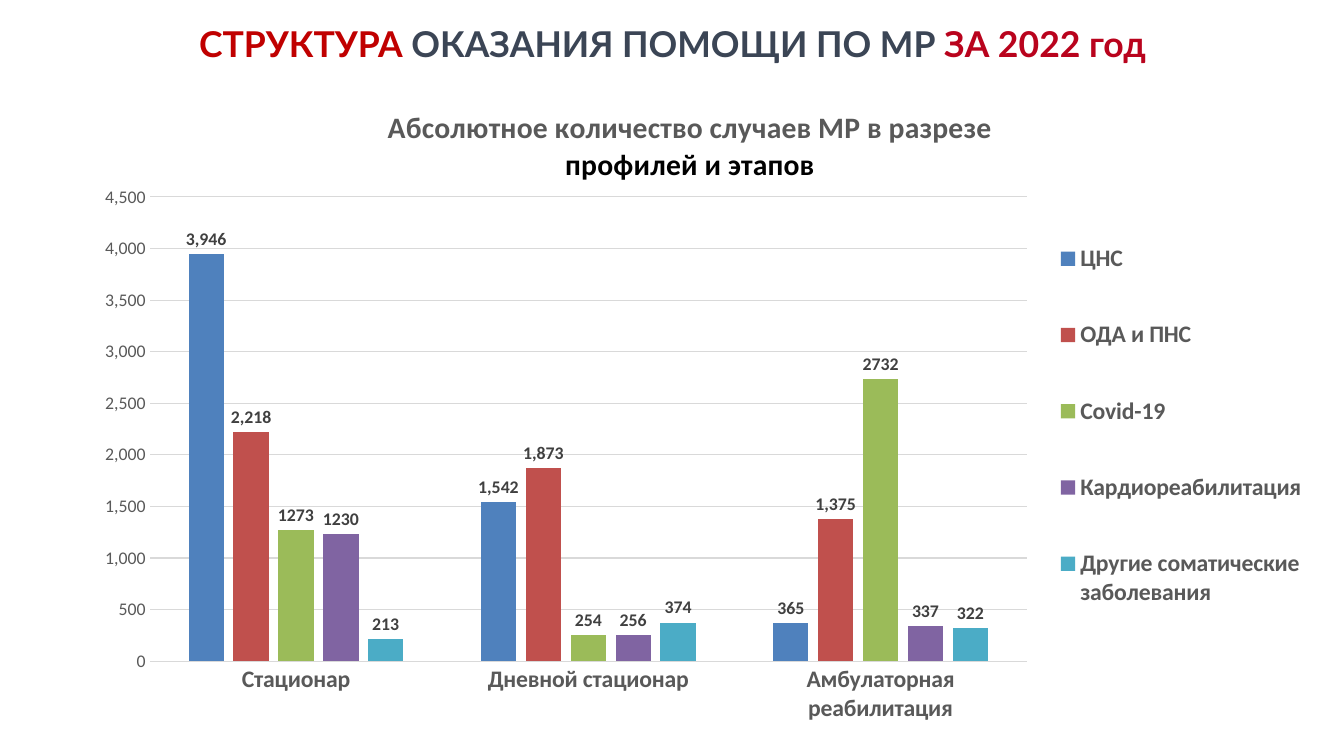
from dataclasses import dataclass

from lxml import etree
from pptx import Presentation
from pptx.chart.data import CategoryChartData
from pptx.dml.color import RGBColor
from pptx.enum import chart as ch, text
from pptx.oxml.ns import qn
from pptx.util import Inches, Pt


@dataclass(frozen=True)
class Theme:
    heading_font: str = "Lato"
    chart_font: str = "Calibri"
    red: str = "C00000"
    crimson: str = "B9031D"
    slate: str = "3B4555"
    black: str = "000000"
    grey: str = "595959"
    label: str = "404040"
    rule: str = "D9D9D9"
    heading_size: int = 24
    chart_title_size: int = 20
    caption_size: int = 16
    value_size: int = 12


T = Theme()

HEADING = [
    ("СТРУКТУРА", T.red),
    (" ОКАЗАНИЯ ПОМОЩИ ПО МР ", T.slate),
    ("ЗА 2022 год", T.crimson),
]
CHART_TITLE = [
    ("Абсолютное количество случаев МР в разрезе", T.grey),
    ("профилей и этапов", T.black),
]
STAGES = ["Стационар", "Дневной стационар", "Амбулаторная реабилитация"]
THOUSANDS, PLAIN = "#,##0", "General"
PROFILES = [
    ("ЦНС", (3946, 1542, 365), "4F81BD", THOUSANDS),
    ("ОДА и ПНС", (2218, 1873, 1375), "C0504D", THOUSANDS),
    ("Covid-19", (1273, 254, 2732), "9BBB59", PLAIN),
    ("Кардиореабилитация", (1230, 256, 337), "8064A2", PLAIN),
    ("Другие соматические заболевания", (213, 374, 322), "4BACC6", PLAIN),
]

SLIDE_SIZE = (12.6, 7.09)
HEADING_BOX = (0.32, 0.08, 11.97, 0.65)
CHART_BOX = (0.71, 0.79, 11.58, 6.22)
# Shares of the chart area: left, top, and optionally width, height
TITLE_AREA = (0.25, 0.03)
PLOT_AREA = (0.06, 0.17, 0.71, 0.7)
LEGEND_AREA = (0.79, 0.17, 0.21, 0.69)


def set_font(font, name, size, color, bold=False):
    font.name = name
    font.size = Pt(size)
    font.bold = bold
    font.color.rgb = RGBColor.from_string(color)


def set_line(line, color):
    line.color.rgb = RGBColor.from_string(color)
    line.width = Pt(0.75)


def place(chart, tag, index, area, inner=False):
    """Fix a chart part at the given shares of the chart area."""
    parent = chart.element.find(".//" + qn(tag))
    for old in parent.findall(qn("c:layout")):
        parent.remove(old)
    layout = etree.Element(qn("c:layout"))
    manual = etree.SubElement(layout, qn("c:manualLayout"))
    settings = [("layoutTarget", "inner")] if inner else []
    settings += [("xMode", "edge"), ("yMode", "edge")]
    settings += zip("xywh", area)
    for name, value in settings:
        etree.SubElement(manual, qn("c:" + name)).set("val", str(value))
    parent.insert(index, layout)


def add_heading(slide):
    tf = slide.shapes.add_textbox(*map(Inches, HEADING_BOX)).text_frame
    tf.word_wrap = True
    tf.vertical_anchor = text.MSO_ANCHOR.MIDDLE
    p = tf.paragraphs[0]
    p.alignment = text.PP_ALIGN.CENTER
    for words, color in HEADING:
        r = p.add_run()
        r.text = words
        set_font(r.font, T.heading_font, T.heading_size, color, True)


def add_chart_title(chart):
    tf = chart.chart_title.text_frame
    for i, (words, color) in enumerate(CHART_TITLE):
        p = tf.add_paragraph() if i else tf.paragraphs[0]
        p.alignment = text.PP_ALIGN.CENTER
        r = p.add_run()
        r.text = words
        set_font(r.font, T.chart_font, T.chart_title_size, color, True)
    chart.chart_title.include_in_layout = False


def style_axes(chart):
    stages, counts = chart.category_axis, chart.value_axis
    for axis in (stages, counts):
        axis.major_tick_mark = axis.minor_tick_mark = ch.XL_TICK_MARK.NONE
    set_font(stages.tick_labels.font, T.chart_font, T.caption_size, T.grey, True)
    set_line(stages.format.line, T.rule)
    set_font(counts.tick_labels.font, T.chart_font, T.value_size, T.grey)
    counts.tick_labels.number_format = THOUSANDS
    counts.tick_labels.number_format_is_linked = False
    counts.minimum_scale, counts.maximum_scale, counts.major_unit = 0, 4500, 500
    counts.format.line.fill.background()
    set_line(counts.major_gridlines.format.line, T.rule)


def style_bars(plot):
    plot.gap_width, plot.overlap = 219, -27
    plot.vary_by_categories = False
    for series, (_, _, color, number_format) in zip(plot.series, PROFILES):
        series.invert_if_negative = False
        series.format.fill.solid()
        series.format.fill.fore_color.rgb = RGBColor.from_string(color)
        labels = series.data_labels
        labels.show_value = True
        labels.position = ch.XL_LABEL_POSITION.OUTSIDE_END
        labels.number_format = number_format
        labels.number_format_is_linked = False
        set_font(labels.font, T.chart_font, T.value_size, T.label, True)


def add_case_chart(slide):
    data = CategoryChartData()
    data.categories = STAGES
    for name, values, _, number_format in PROFILES:
        data.add_series(name, values, number_format)
    chart = slide.shapes.add_chart(
        ch.XL_CHART_TYPE.COLUMN_CLUSTERED, *map(Inches, CHART_BOX), data
    ).chart
    set_font(chart.font, T.chart_font, 10, T.black)
    add_chart_title(chart)
    style_axes(chart)
    style_bars(chart.plots[0])
    chart.has_legend = True
    chart.legend.position = ch.XL_LEGEND_POSITION.BOTTOM
    chart.legend.include_in_layout = False
    set_font(chart.legend.font, T.chart_font, T.caption_size, T.grey, True)
    place(chart, "c:title", 1, TITLE_AREA)
    place(chart, "c:plotArea", 0, PLOT_AREA, inner=True)
    place(chart, "c:legend", 1, LEGEND_AREA)


def main():
    prs = Presentation()
    prs.slide_width, prs.slide_height = map(Inches, SLIDE_SIZE)
    slide = prs.slides.add_slide(prs.slide_layouts[6])
    add_heading(slide)
    add_case_chart(slide)
    prs.save("out.pptx")


if __name__ == "__main__":
    main()
